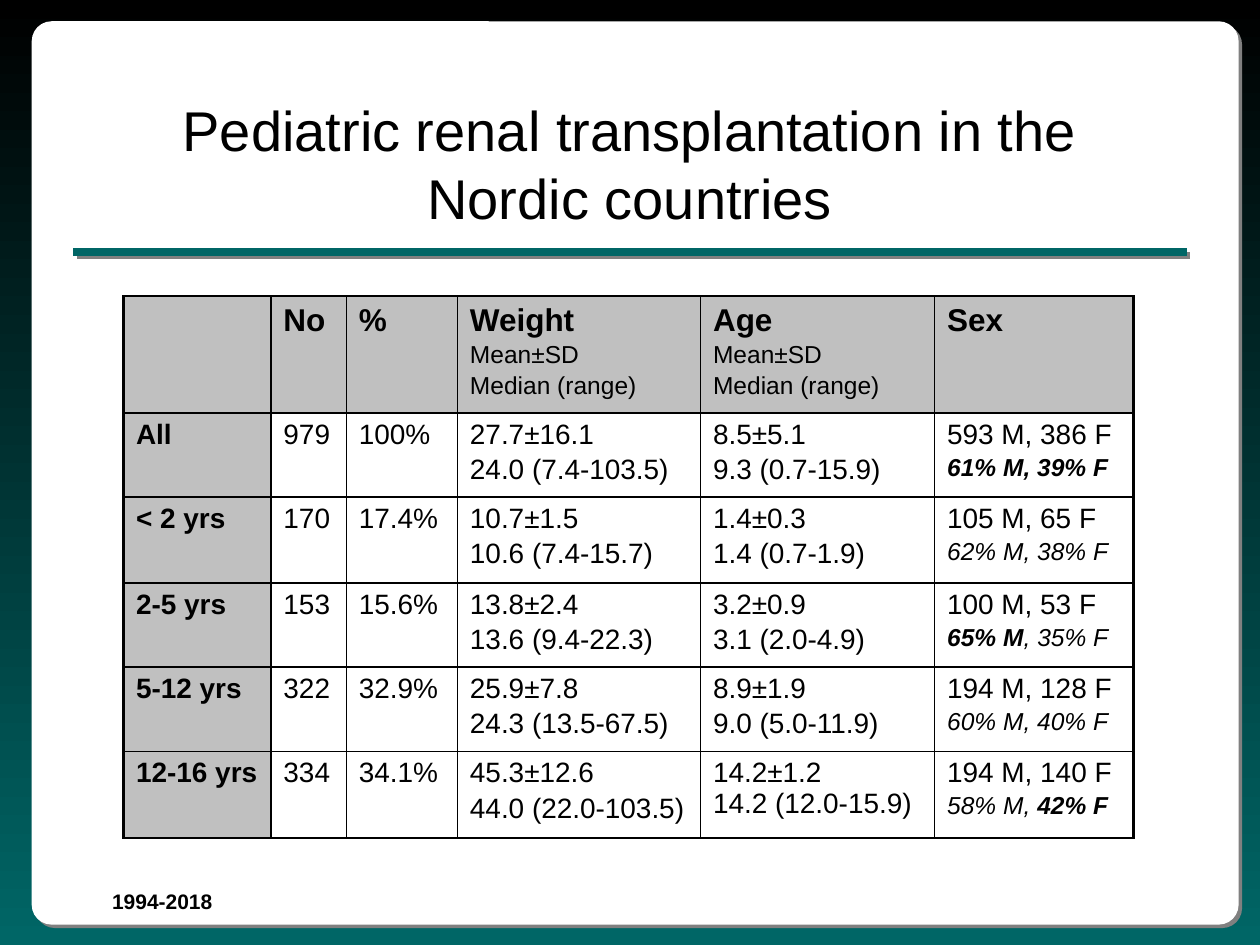
from dataclasses import dataclass

from lxml import etree
from pptx import Presentation
from pptx.dml.color import RGBColor
from pptx.enum.shapes import MSO_CONNECTOR, MSO_SHAPE
from pptx.enum.text import MSO_ANCHOR, PP_ALIGN
from pptx.oxml.ns import qn
from pptx.util import Cm, Pt

ROUND = MSO_SHAPE.ROUNDED_RECTANGLE
LINE = MSO_CONNECTOR.STRAIGHT
MIDDLE = MSO_ANCHOR.MIDDLE
CENTER = PP_ALIGN.CENTER


@dataclass(frozen=True)
class Theme:
    font: str = "Arial"
    ink: str = "000000"
    teal: str = "006666"
    paper: str = "FFFFFF"
    head: str = "C0C0C0"
    shade: str = "808080"
    title: int = 32
    label: int = 18
    body: int = 16
    note: int = 14
    foot: int = 12
    inner: float = 1
    outer: float = 1.5
    gap: float = 0.15  # space between paragraphs, share of type size


THEME = Theme()

COLS = (2.97, 1.52, 2.24, 4.9, 4.72, 4.01)
ROWS = (2.34, 1.7, 1.73, 1.6, 1.7, 1.75)
HEADS = ("", "No", "%", "Weight", "Age", "Sex")
STATS = ("Mean±SD", "Median (range)")

# Group, number, share, weight, age, sex count, sex share as (text, bold) runs
GROUPS = (
    ("All", "979", "100%", ("27.7±16.1", "24.0 (7.4-103.5)"),
     ("8.5±5.1", "9.3 (0.7-15.9)"), "593 M, 386 F",
     [("61% M, 39% F", True)]),
    ("< 2 yrs", "170", "17.4%", ("10.7±1.5", "10.6 (7.4-15.7)"),
     ("1.4±0.3", "1.4 (0.7-1.9)"), "105 M, 65 F",
     [("62% M, 38% F", False)]),
    ("2-5 yrs", "153", "15.6%", ("13.8±2.4", "13.6 (9.4-22.3)"),
     ("3.2±0.9", "3.1 (2.0-4.9)"), "100 M, 53 F",
     [("65% M", True), (", 35% F", False)]),
    ("5-12 yrs", "322", "32.9%", ("25.9±7.8", "24.3 (13.5-67.5)"),
     ("8.9±1.9", "9.0 (5.0-11.9)"), "194 M, 128 F",
     [("60% M, 40% F", False)]),
    ("12-16 yrs", "334", "34.1%", ("45.3±12.6", "44.0 (22.0-103.5)"),
     ("14.2±1.2\v14.2 (12.0-15.9)",), "194 M, 140 F",
     [("58% M, ", False), ("42% F", True)]),
)


def color(code):
    return RGBColor.from_string(code)


def style(font, size, bold=False, italic=False):
    font.name, font.size = THEME.font, Pt(size)
    font.bold, font.italic = bold, italic
    font.color.rgb = color(THEME.ink)


def shadow(shape):
    """Give a shape or connector a hard shadow to the lower right."""
    box = etree.SubElement(shape._element.spPr, qn("a:effectLst"))
    cast = etree.SubElement(box, qn("a:outerShdw"), blurRad="0",
                            dist=str(Pt(2.8)), dir="2700000",
                            algn="ctr", rotWithShape="0")
    etree.SubElement(cast, qn("a:srgbClr"), val=THEME.shade)


def label(slide, box, text, size, bold=False):
    frame = slide.shapes.add_textbox(*map(Cm, box)).text_frame
    frame.word_wrap = True
    para = frame.paragraphs[0]
    para.text = text
    style(para.font, size, bold)
    return frame


def write(frame, paras):
    """Fill a frame with (text or runs, size, bold, italic) paragraphs."""
    for i, (text, size, bold, italic) in enumerate(paras):
        para = frame.add_paragraph() if i else frame.paragraphs[0]
        if i:
            para.space_before = Pt(size * THEME.gap)
        if isinstance(text, str):
            para.text = text
            style(para.font, size, bold, italic)
            continue
        for part, heavy in text:
            run = para.add_run()
            run.text = part
            style(run.font, size, heavy, italic)


def edge(cell, widths):
    """Draw the left, right, top and bottom borders of a cell."""
    props = cell._tc.get_or_add_tcPr()
    for side, width in zip("LRTB", widths):
        line = etree.SubElement(props, qn(f"a:ln{side}"), w=str(Pt(width)))
        fill = etree.SubElement(line, qn("a:solidFill"))
        etree.SubElement(fill, qn("a:srgbClr"), val=THEME.ink)


def content():
    """Return the table as rows of cells, each a list of paragraphs."""
    head = [[(name, THEME.label, True, False)] for name in HEADS]
    for cell in head[3:5]:
        cell += [(stat, THEME.note, False, False) for stat in STATS]
    grid = [head]
    for name, count, share, weight, age, sex, split in GROUPS:
        row = [[(name, THEME.body, True, False)]]
        row += [[(text, THEME.body, False, False) for text in lines]
                for lines in ((count,), (share,), weight, age, (sex,))]
        row[-1].append((split, THEME.note, False, True))
        grid.append(row)
    return grid


def panel(slide, box):
    fill = slide.background.fill
    fill.gradient()
    fill.gradient_angle = 270
    for stop, code, spot in zip(fill.gradient_stops,
                                (THEME.ink, THEME.teal), (0, 1)):
        stop.color.rgb, stop.position = color(code), spot
    card = slide.shapes.add_shape(ROUND, *map(Cm, box))
    card.adjustments[0] = 0.022
    card.fill.solid()
    card.fill.fore_color.rgb = color(THEME.paper)
    card.line.fill.background()
    shadow(card)


def header(slide, box):
    left, top, width, height = box
    frame = label(slide, (left + 0.43, top, width - 0.86, height - 0.2),
                  "Pediatric renal transplantation in the Nordic countries",
                  THEME.title)
    frame.vertical_anchor = MIDDLE
    frame.paragraphs[0].alignment = CENTER
    # Rule under the title
    base = Cm(top + height)
    rule = slide.shapes.add_connector(LINE, Cm(left), base,
                                      Cm(left + width), base)
    rule.line.color.rgb = color(THEME.teal)
    rule.line.width = Pt(4.5)
    shadow(rule)


def table(slide, left, top):
    grid = slide.shapes.add_table(
        len(ROWS), len(COLS), Cm(left), Cm(top),
        Cm(sum(COLS)), Cm(sum(ROWS))).table
    grid.first_row = grid.horz_banding = False
    for col, width in zip(grid.columns, COLS):
        col.width = Cm(width)
    for row, height in zip(grid.rows, ROWS):
        row.height = Cm(height)
    for r, row in enumerate(content()):
        for c, paras in enumerate(row):
            cell = grid.cell(r, c)
            rims = (c == 0, c == len(COLS) - 1, r == 0, r == len(ROWS) - 1)
            edge(cell, [THEME.outer if rim else THEME.inner for rim in rims])
            if r == 0 or c == 0:
                cell.fill.solid()
                cell.fill.fore_color.rgb = color(THEME.head)
            else:
                cell.fill.background()
            write(cell.text_frame, paras)


def main():
    deck = Presentation()
    deck.slide_width, deck.slide_height = Cm(25.4), Cm(19.05)
    slide = deck.slides.add_slide(deck.slide_layouts[6])
    panel(slide, (0.64, 0.43, 24.33, 18.21))
    label(slide, (2.01, 17.78, 3.73, 0.76), "1994-2018", THEME.foot, True)
    header(slide, (1.48, 1.7, 22.44, 3.38))
    table(slide, 2.49, 5.97)
    deck.save("out.pptx")


if __name__ == "__main__":
    main()
